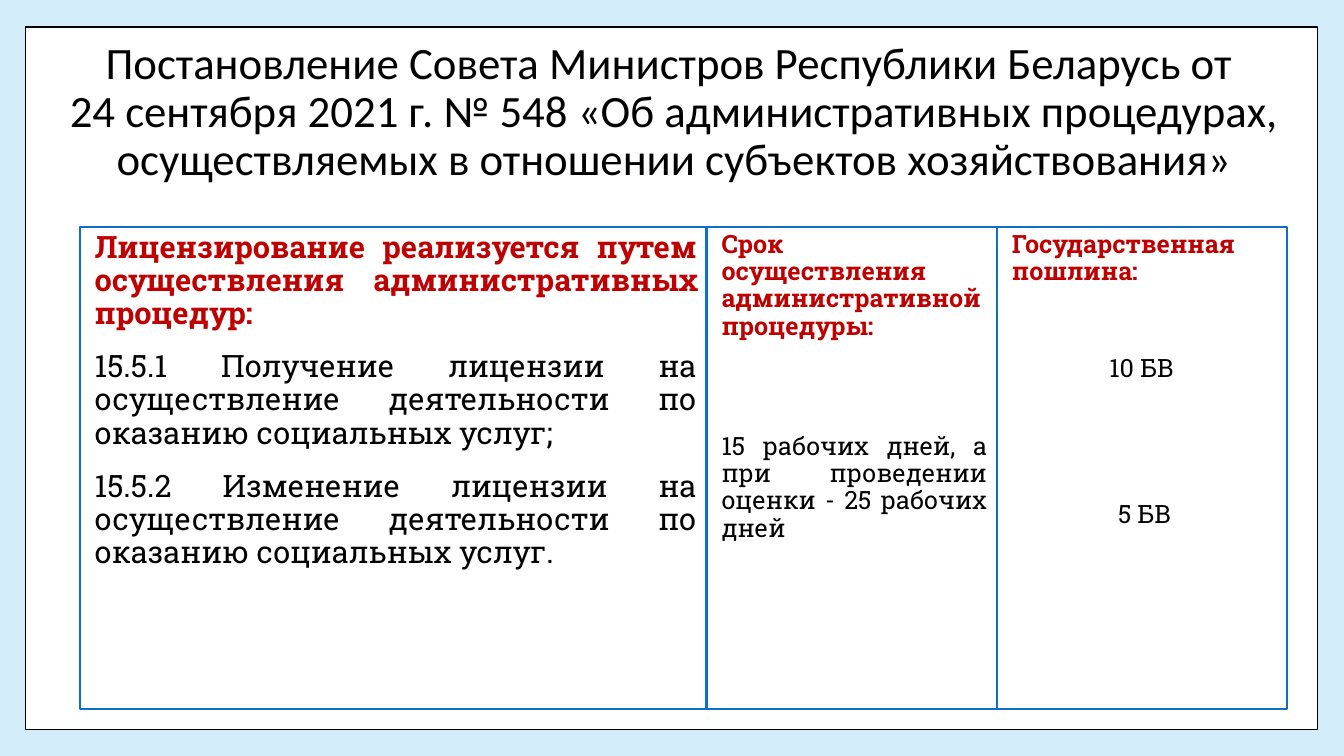
from pptx import Presentation
from pptx.dml.color import RGBColor
from pptx.enum.shapes import MSO_SHAPE
from pptx.enum.text import MSO_ANCHOR, PP_ALIGN
from pptx.util import Pt

COLORS = {"back": "D3ECF9", "white": "FFFFFF", "black": "000000",
          "blue": "0F6FC6", "red": "C00000"}
MID, FULL = PP_ALIGN.CENTER, PP_ALIGN.JUSTIFY


def color(name):
    return RGBColor.from_string(COLORS[name])


def add_box(left, top, width, height, edge, weight):
    box = slide.shapes.add_shape(MSO_SHAPE.RECTANGLE, Pt(left), Pt(top),
                                 Pt(width), Pt(height))
    box.shadow.inherit = False
    box.fill.solid()
    box.fill.fore_color.rgb = color("white")
    box.line.color.rgb = color(edge)
    box.line.width = Pt(weight)
    return box


# Slide and background
deck = Presentation()
deck.slide_width, deck.slide_height = Pt(960), Pt(540)
slide = deck.slides.add_slide(deck.slide_layouts[6])
slide.background.fill.solid()
slide.background.fill.fore_color.rgb = color("back")

# White panel
add_box(18, 19.4, 923, 501.9, "black", 1)

# Title
title = slide.shapes.add_textbox(Pt(23.8), Pt(27.4), Pt(897.8), Pt(106.6))
frame = title.text_frame
frame.word_wrap = True
frame.vertical_anchor = MSO_ANCHOR.MIDDLE
para = frame.paragraphs[0]
para.alignment = MID
para.line_spacing = 0.9
para.space_after = Pt(4)
para._p.get_or_add_pPr().set("marL", str(Pt(18)))
lines = ["Постановление Совета Министров Республики Беларусь от ",
         "24 сентября 2021 г. № 548 «Об административных процедурах, "
         "осуществляемых в отношении субъектов хозяйствования»"]
for index, line in enumerate(lines):
    if index:
        para.add_line_break()
    run = para.add_run()
    run.text = line
    run.font.name = "Calibri"
    run.font.size = Pt(32)
    run.font.color.rgb = color("black")

# Columns: width, text size, then heading and items (text, align, space before)
columns = [
    (447.8, 22, [
        ("Лицензирование реализуется путем осуществления "
         "административных процедур: ", FULL, 14),
        ("15.5.1 Получение лицензии на осуществление деятельности "
         "по оказанию социальных услуг; ", FULL, 14),
        ("15.5.2 Изменение лицензии на осуществление деятельности "
         "по оказанию социальных услуг.", FULL, 14)]),
    (207.4, 18, [
        ("Срок осуществления административной процедуры:", FULL, 14),
        ("15 рабочих дней, а при проведении оценки - 25 рабочих дней",
         FULL, 66.4)]),
    (207.4, 18, [
        ("Государственная пошлина:", FULL, 14),
        ("10 БВ ", MID, 49.4),
        ("5 БВ", MID, 85.4)]),
]
left = 56.9
for width, size, items in columns:
    frame = add_box(left, 162, width, 344.2, "blue", 1.5).text_frame
    frame.word_wrap = True
    frame.vertical_anchor = MSO_ANCHOR.TOP
    for index, (text, align, gap) in enumerate(items):
        para = frame.add_paragraph() if index else frame.paragraphs[0]
        para.alignment = align
        para.line_spacing = 0.9
        para.space_before = Pt(gap)
        para._p.get_or_add_pPr().set("marL", str(Pt(3.6)))
        run = para.add_run()
        run.text = text
        run.font.name = "Roboto Slab"
        run.font.size = Pt(size)
        run.font.bold = index == 0
        run.font.color.rgb = color("black" if index else "red")
    left += width

deck.save("out.pptx")
